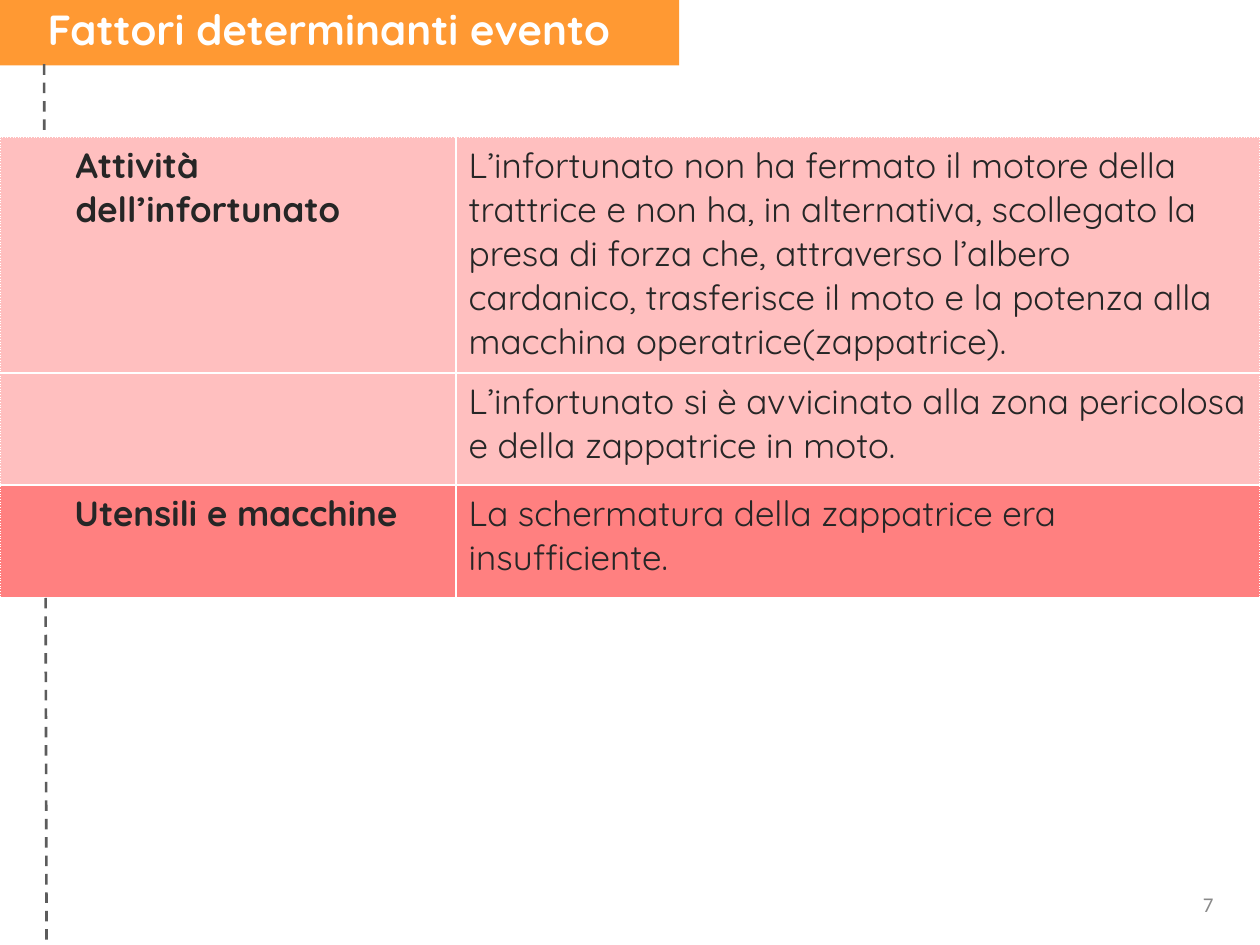
from lxml import etree
from pptx import Presentation
from pptx.dml.color import RGBColor
from pptx.enum.dml import MSO_LINE
from pptx.enum.shapes import MSO_CONNECTOR, MSO_SHAPE
from pptx.enum.text import PP_ALIGN
from pptx.oxml.ns import qn
from pptx.util import Inches, Pt

RECTANGLE = MSO_SHAPE.RECTANGLE
STRAIGHT = MSO_CONNECTOR.STRAIGHT
DASH = MSO_LINE.DASH
LEFT, RIGHT = PP_ALIGN.LEFT, PP_ALIGN.RIGHT

WHITE = RGBColor(0xFF, 0xFF, 0xFF)
ORANGE = RGBColor(0xFF, 0x99, 0x33)
GREY = RGBColor(0x5C, 0x5C, 0x5C)
PAGE_GREY = RGBColor(0x89, 0x89, 0x89)
INK = RGBColor(0x26, 0x26, 0x26)
LIGHT_RED = RGBColor(0xFF, 0xBF, 0xBF)
RED = RGBColor(0xFF, 0x80, 0x80)

# Content
TITLE = "Fattori determinanti evento"
PAGE_NUMBER = "7"
COLUMN_WIDTHS = [3.62, 6.38]
# Each row: height, fill, factor, left indent of the factor, description paragraphs
ROWS = [
    (1.87, LIGHT_RED, "Attività dell’infortunato", 0.5, [
        "L’infortunato non ha fermato il motore della",
        "trattrice e non ha, in alternativa, scollegato la presa di forza che, "
        "attraverso l’albero cardanico, trasferisce il moto e la potenza alla "
        "macchina operatrice(zappatrice).",
    ]),
    (0.89, LIGHT_RED, "", 0, [
        "L’infortunato si è avvicinato alla zona pericolosa e della zappatrice in moto.",
    ]),
    (0.89, RED, "Utensili e macchine", 0.49, [
        "La schermatura della zappatrice era insufficiente.",
    ]),
]


def write_text(frame, paragraphs, size=20, color=INK, bold=False,
               font="Quicksand", align=LEFT):
    frame.word_wrap = True
    for index, text in enumerate(paragraphs):
        paragraph = frame.paragraphs[0] if index == 0 else frame.add_paragraph()
        paragraph.alignment = align
        paragraph.font.size = Pt(size)
        if not text:
            continue
        run = paragraph.add_run()
        run.text = text
        run.font.name = font
        run.font.size = Pt(size)
        run.font.bold = bold
        run.font.color.rgb = color


def add_text_box(slide, left, top, width, height, text, **text_format):
    box = slide.shapes.add_textbox(Inches(left), Inches(top), Inches(width), Inches(height))
    write_text(box.text_frame, [text], **text_format)


def set_borders(cell, outer_edges):
    """Outer edges are thin and dotted, inner ones solid."""
    properties = cell._tc.get_or_add_tcPr()
    for index, edge in enumerate(("lnL", "lnR", "lnT", "lnB")):
        outer = edge in outer_edges
        line = etree.Element(qn("a:" + edge), w=str(Pt(0.75 if outer else 1)))
        fill = etree.SubElement(line, qn("a:solidFill"))
        etree.SubElement(fill, qn("a:srgbClr"), val=str(WHITE))
        etree.SubElement(line, qn("a:prstDash"), val="sysDot" if outer else "solid")
        properties.insert(index, line)


def add_factor_table(slide):
    width, height = sum(COLUMN_WIDTHS), sum(row[0] for row in ROWS)
    frame = slide.shapes.add_table(len(ROWS), len(COLUMN_WIDTHS), Inches(0), Inches(1.09),
                                   Inches(width), Inches(height))
    table = frame.table
    table.first_row = table.horz_banding = False
    for column, column_width in zip(table.columns, COLUMN_WIDTHS):
        column.width = Inches(column_width)

    for row_index, (row_height, fill, factor, indent, description) in enumerate(ROWS):
        table.rows[row_index].height = Inches(row_height)
        row_edges = set()
        if row_index == 0:
            row_edges.add("lnT")
        if row_index == len(ROWS) - 1:
            row_edges.add("lnB")
        factor_cell, description_cell = table.cell(row_index, 0), table.cell(row_index, 1)
        for cell, side in ((factor_cell, "lnL"), (description_cell, "lnR")):
            cell.fill.solid()
            cell.fill.fore_color.rgb = fill
            set_borders(cell, row_edges | {side})
        factor_cell.margin_left = Inches(0.1 + indent)
        write_text(factor_cell.text_frame, [factor], bold=True)
        write_text(description_cell.text_frame, description)


def main():
    presentation = Presentation()
    presentation.slide_width, presentation.slide_height = Inches(10), Inches(7.5)
    slide = presentation.slides.add_slide(presentation.slide_layouts[6])

    # Title bar
    bar = slide.shapes.add_shape(RECTANGLE, Inches(-0.12), Inches(0), Inches(5.51), Inches(0.52))
    bar.shadow.inherit = False
    bar.fill.solid()
    bar.fill.fore_color.rgb = ORANGE
    bar.line.fill.background()

    # Dashed guide line
    guide = slide.shapes.add_connector(STRAIGHT, Inches(0.35), Inches(0.51),
                                       Inches(0.37), Inches(7.5))
    guide.line.color.rgb = GREY
    guide.line.width = Pt(1.5)
    guide.line.dash_style = DASH
    etree.SubElement(guide._element.spPr, qn("a:effectLst"))

    # Page number, title and table
    add_text_box(slide, 9.17, 7.03, 0.56, 0.42, PAGE_NUMBER, size=12, color=PAGE_GREY,
                 font="Calibri", align=RIGHT)
    add_text_box(slide, 0.28, -0.02, 7.83, 0.5, TITLE, size=24, color=WHITE, bold=True)
    add_factor_table(slide)

    presentation.save("out.pptx")


if __name__ == "__main__":
    main()
